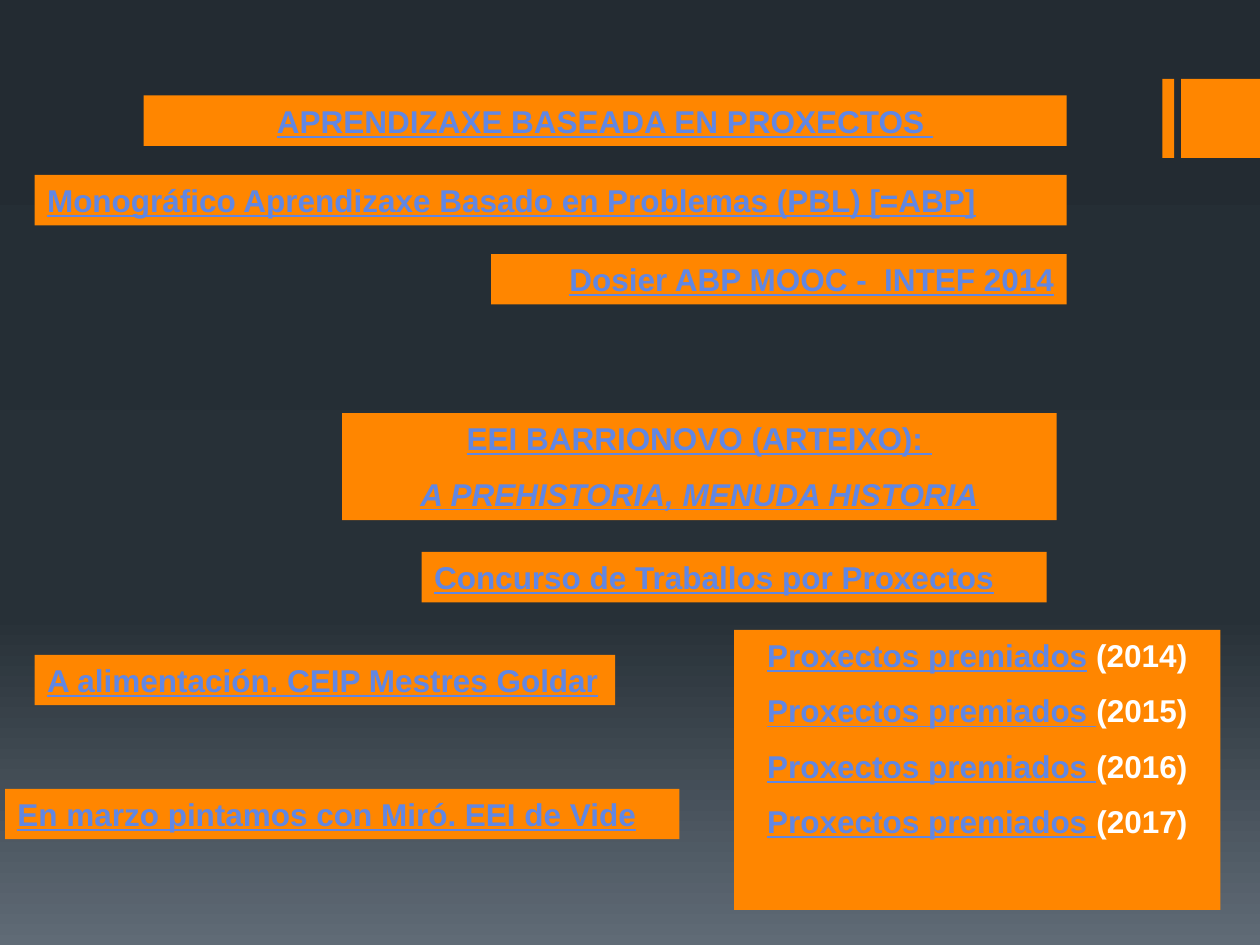
from copy import deepcopy
from dataclasses import dataclass

from pptx import Presentation
from pptx.dml.color import RGBColor as Rgb
from pptx.enum.shapes import MSO_SHAPE as Shape
from pptx.enum.text import MSO_ANCHOR as Anchor, PP_ALIGN as Align
from pptx.oxml.ns import qn
from pptx.util import Pt


@dataclass(frozen=True)
class Theme:
    panel: Rgb = Rgb(0xFF, 0x86, 0x00)
    link: Rgb = Rgb(0x61, 0x87, 0xE3)
    plain: Rgb = Rgb(0xFF, 0xFF, 0xFF)
    sky: tuple = ((0, "232B32"), (0.65, "273037"), (1, "606B76"))
    face: str = "Arial"
    size: int = 18
    gap: int = 10


THEME = Theme()
ROW = 28.8
LEFT, MID, RIGHT = Align.LEFT, Align.CENTER, Align.RIGHT

LABELS = [
    ((82.1, 54.6, 527.4, ROW), MID, ["APRENDIZAXE BASEADA EN PROXECTOS "]),
    ((19.8, 100, 589.7, ROW), LEFT,
     ["Monográfico Aprendizaxe Basado en Problemas (PBL) [=ABP]"]),
    ((280.6, 145.2, 328.9, ROW), RIGHT, ["Dosier ABP MOOC -  INTEF 2014"]),
    ((195.6, 236, 408.2, 61.2), MID,
     ["EEI BARRIONOVO (ARTEIXO): ", "A PREHISTORIA, MENUDA HISTORIA"]),
    ((241, 315.4, 357.1, ROW), LEFT, ["Concurso de Traballos por Proxectos"]),
    ((19.8, 374.2, 331.7, ROW), LEFT, ["A alimentación. CEIP Mestres Goldar"]),
    ((2.9, 450.8, 385.4, ROW), LEFT, ["En marzo pintamos con Miró. EEI de Vide"]),
]
AWARDS = [
    ("Proxectos premiados", " (2014)"),
    ("Proxectos premiados ", "(2015)"),
    ("Proxectos premiados ", "(2016)"),
    ("Proxectos premiados ", "(2017)"),
]


def paint_sky(slide):
    fill = slide.background.fill
    fill.gradient()
    fill.gradient_angle = 270
    stops = slide.element.find(".//" + qn("a:gsLst"))
    stops.append(deepcopy(stops[-1]))
    for stop, (place, tint) in zip(fill.gradient_stops, THEME.sky):
        stop.position = place
        stop.color.rgb = Rgb.from_string(tint)


def add_bars(slide, box):
    left, top, width, height = box
    thin = 6.7
    for x, w in ((left, thin), (left + width - height, height)):
        bar = slide.shapes.add_shape(
            Shape.RECTANGLE, Pt(x), Pt(top), Pt(w), Pt(height))
        bar.shadow.inherit = False
        bar.fill.solid()
        bar.fill.fore_color.rgb = THEME.panel
        bar.line.fill.background()


def add_panel(slide, box):
    panel = slide.shapes.add_textbox(*map(Pt, box))
    panel.fill.solid()
    panel.fill.fore_color.rgb = THEME.panel
    frame = panel.text_frame
    frame.word_wrap = True
    frame.vertical_anchor = Anchor.TOP
    return frame


def add_line(frame, first, align):
    line = frame.paragraphs[0] if first else frame.add_paragraph()
    line.alignment = align
    line.space_before = Pt(0 if first else THEME.gap)
    font = line.font
    font.name, font.size, font.bold = THEME.face, Pt(THEME.size), True
    return line


def add_label(slide, box, align, texts):
    frame = add_panel(slide, box)
    for i, text in enumerate(texts):
        line = add_line(frame, i == 0, align)
        line.add_run().text = text
        line.font.underline = True
        line.font.italic = i > 0
        line.font.color.rgb = THEME.link


def add_awards(slide, box):
    frame = add_panel(slide, box)
    for i, (title, year) in enumerate(AWARDS):
        line = add_line(frame, i == 0, MID)
        for text, tint in ((title, THEME.link), (year, THEME.plain)):
            run = line.add_run()
            run.text = text
            run.font.underline = tint == THEME.link
            run.font.color.rgb = tint


def main():
    deck = Presentation()
    deck.slide_width, deck.slide_height = Pt(720), Pt(540)
    slide = deck.slides.add_slide(deck.slide_layouts[6])
    paint_sky(slide)
    add_bars(slide, (664.3, 45.1, 55.7, 45.1))
    for box, align, texts in LABELS:
        add_label(slide, box, align, texts)
    add_awards(slide, (419.5, 360, 277.9, 160))
    deck.save("out.pptx")


if __name__ == "__main__":
    main()
